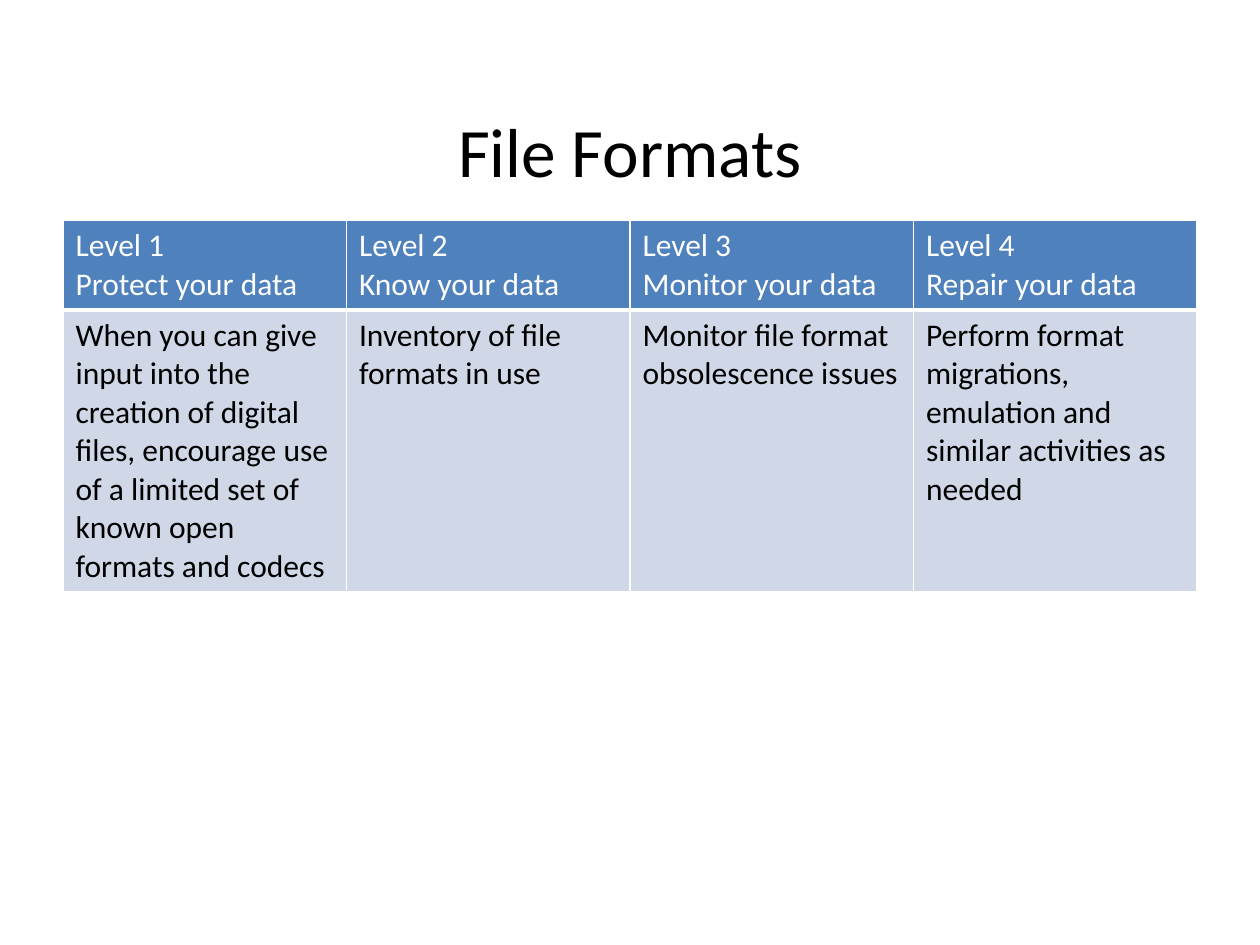
from lxml.etree import SubElement
from pptx import Presentation
from pptx.dml.color import RGBColor
from pptx.enum.text import MSO_ANCHOR, PP_ALIGN
from pptx.oxml.ns import qn
from pptx.util import Inches, Pt

TITLE = "File Formats"
LEVELS = [
    ("Level 1\nProtect your data",
     "When you can give input into the creation of digital files, "
     "encourage use of a limited set of known open formats and codecs"),
    ("Level 2\nKnow your data", "Inventory of file formats in use"),
    ("Level 3\nMonitor your data", "Monitor file format obsolescence issues"),
    ("Level 4\nRepair your data",
     "Perform format migrations, emulation and similar activities as needed"),
]
COLORS = {"header": "4F81BD", "body": "D0D8E8", "light": "FFFFFF", "dark": "000000"}
FONT = "Calibri"
WIDTH, HEIGHT = 10, 7.5
MARGIN = WIDTH * 0.05
CONTENT_W = WIDTH - 2 * MARGIN
ROW_HEIGHTS = (0.7, 2.2)
# fill, text colour, bottom border in points
ROW_STYLES = [("header", "light", 3), ("body", "dark", 1)]


def write(tf, text, size=18, color="dark", align=PP_ALIGN.LEFT):
    tf.text = text
    for p in tf.paragraphs:
        p.alignment = align
        for r in p.runs:
            r.font.name = FONT
            r.font.size = Pt(size)
            r.font.bold = False
            r.font.color.rgb = RGBColor.from_string(COLORS[color])


def set_borders(cell, bottom):
    tcPr = cell._tc.get_or_add_tcPr()
    for side, width in (("L", 1), ("R", 1), ("T", 1), ("B", bottom)):
        ln = SubElement(tcPr, qn(f"a:ln{side}"), w=str(Pt(width)))
        fill = SubElement(ln, qn("a:solidFill"))
        SubElement(fill, qn("a:srgbClr"), val=COLORS["light"])


prs = Presentation()
prs.slide_width, prs.slide_height = Inches(WIDTH), Inches(HEIGHT)
s = prs.slides.add_slide(prs.slide_layouts[5])

title = s.shapes.title
title.left, title.top = Inches(MARGIN), Inches(0.83)
title.width, title.height = Inches(CONTENT_W), Inches(0.72)
title.text_frame.vertical_anchor = MSO_ANCHOR.MIDDLE
write(title.text_frame, TITLE, size=39.6, align=PP_ALIGN.CENTER)

table = s.shapes.add_table(
    len(ROW_STYLES), len(LEVELS), Inches(MARGIN), Inches(1.75),
    Inches(CONTENT_W), Inches(sum(ROW_HEIGHTS))).table
for row, height in zip(table.rows, ROW_HEIGHTS):
    row.height = Inches(height)

for col, level in enumerate(LEVELS):
    table.columns[col].width = Inches(CONTENT_W / len(LEVELS))
    for row, (text, style) in enumerate(zip(level, ROW_STYLES)):
        fill, color, bottom = style
        cell = table.cell(row, col)
        write(cell.text_frame, text, color=color)
        set_borders(cell, bottom)
        cell.fill.solid()
        cell.fill.fore_color.rgb = RGBColor.from_string(COLORS[fill])

prs.save("out.pptx")
